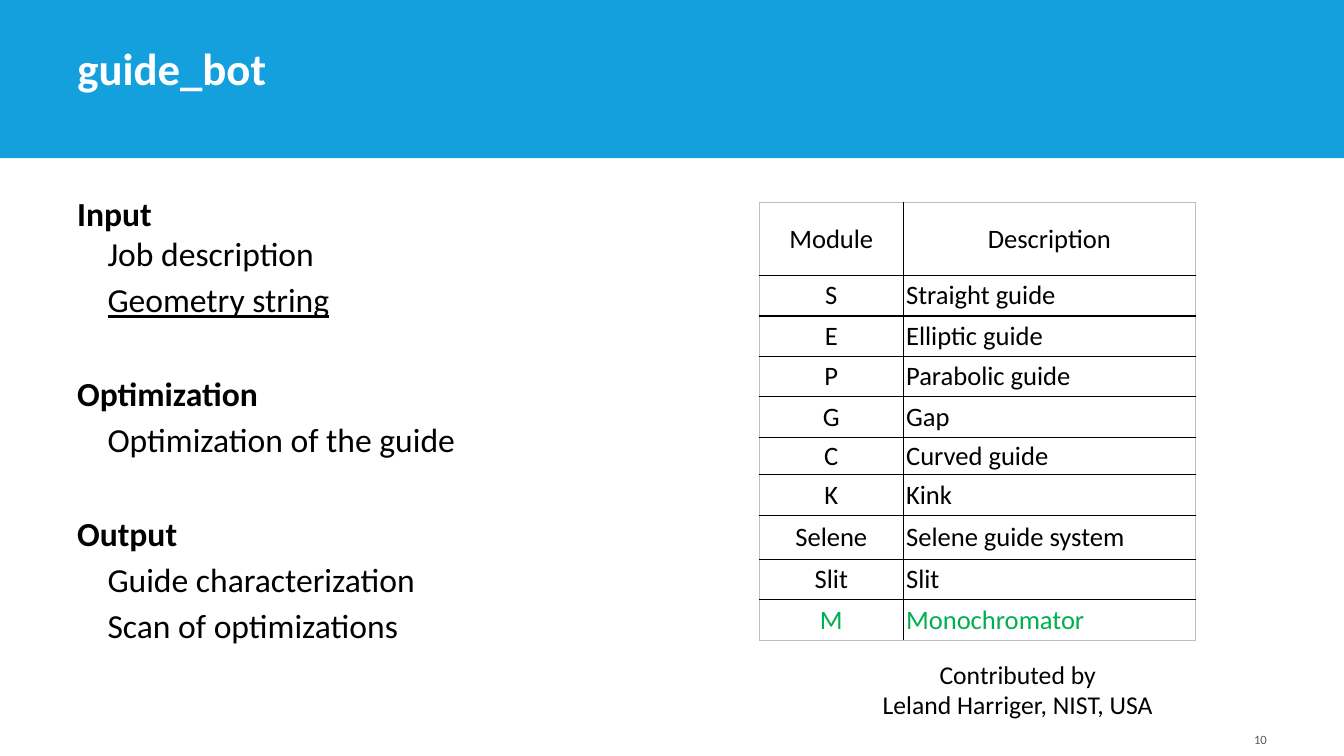
from lxml.etree import SubElement
from pptx import Presentation
from pptx.dml.color import RGBColor
from pptx.enum.shapes import MSO_SHAPE
from pptx.enum.text import MSO_ANCHOR, MSO_AUTO_SIZE, PP_ALIGN
from pptx.oxml.ns import qn
from pptx.util import Pt

COLORS = {"bar": "13A0DD", "white": "FFFFFF", "text": "000000",
          "number": "595959", "new": "00B050", "edge": "BFBFBF"}


def style(para, size, color, align=PP_ALIGN.LEFT, bold=False):
    para.alignment = align
    para.font.name = "Calibri"
    para.font.size = Pt(size)
    para.font.bold = bold
    para.font.color.rgb = RGBColor.from_string(COLORS[color])


def add_border(cell, side, color):
    """Draw one side ("L", "R", "T" or "B") of a table cell."""
    line = SubElement(cell._tc.get_or_add_tcPr(), qn(f"a:ln{side}"), w=str(Pt(1)))
    fill = SubElement(line, qn("a:solidFill"))
    SubElement(fill, qn("a:srgbClr"), val=COLORS[color])


deck = Presentation()
deck.slide_width, deck.slide_height = Pt(960), Pt(540)
page = deck.slides.add_slide(deck.slide_layouts[5])

# Header bar, placed behind the title
bar = page.shapes.add_shape(MSO_SHAPE.RECTANGLE, 0, 0, Pt(960), Pt(113))
bar.shadow.inherit = False
bar.fill.solid()
bar.fill.fore_color.rgb = RGBColor.from_string(COLORS["bar"])
bar.line.fill.background()
page.shapes._spTree.insert(2, bar._element)

title = page.shapes.title
title.left, title.top, title.width, title.height = Pt(48), Pt(27.4), Pt(750), Pt(44)
title.text_frame.text = "guide_bot"
title.text_frame.auto_size = MSO_AUTO_SIZE.NONE
title.text_frame.vertical_anchor = MSO_ANCHOR.BOTTOM
style(title.text_frame.paragraphs[0], 32, "white", bold=True)

# Outline: heading with indented items
outline = [
    ("Input", ["Job description", "Geometry string"]),
    ("Optimization", ["Optimization of the guide"]),
    ("Output", ["Guide characterization", "Scan of optimizations"]),
]
box = page.shapes.add_textbox(Pt(48), Pt(134), Pt(337), Pt(358))
frame = box.text_frame
frame.word_wrap = True
for section, (heading, items) in enumerate(outline):
    para = frame.add_paragraph() if section else frame.paragraphs[0]
    para.text = heading
    para.space_before = Pt(38 if section else 0)
    style(para, 24, "text", bold=True)
    for item in items:
        para = frame.add_paragraph()
        para.text = item
        para._p.get_or_add_pPr().set("marL", str(Pt(21.7)))
        para.space_before = Pt(0 if item == "Job description" else 4.3)
        style(para, 24, "text")
        para.font.underline = item == "Geometry string"

# Table of guide modules: module, description, row height
modules = [
    ("Module", "Description", 52),
    ("S", "Straight guide", 28.9),
    ("E", "Elliptic guide", 28.9),
    ("P", "Parabolic guide", 28.9),
    ("G", "Gap", 28.9),
    ("C", "Curved guide", 26.5),
    ("K", "Kink", 28.9),
    ("Selene", "Selene guide system", 31.5),
    ("Slit", "Slit", 28.9),
    ("M", "Monochromator", 28.9),
]
last = len(modules) - 1
table = page.shapes.add_table(len(modules), 2, Pt(542.3), Pt(144.8),
                              Pt(312), Pt(312)).table
table.first_row = table.horz_banding = False
table.columns[0].width, table.columns[1].width = Pt(103), Pt(208.5)
for row, (module, description, height) in enumerate(modules):
    table.rows[row].height = Pt(height)
    for column, words in enumerate((module, description)):
        cell = table.cell(row, column)
        cell.text = words
        cell.vertical_anchor = MSO_ANCHOR.MIDDLE
        cell.margin_left = cell.margin_right = Pt(2)
        cell.margin_top = cell.margin_bottom = Pt(2)
        centred = row == 0 or column == 0
        style(cell.text_frame.paragraphs[0], 19, "new" if row == last else "text",
              PP_ALIGN.CENTER if centred else PP_ALIGN.LEFT)
        outer = {"L": column == 0, "R": column == 1, "T": row == 0, "B": row == last}
        for side, is_outer in outer.items():
            add_border(cell, side, "edge" if is_outer else "text")
        cell.fill.background()

credit = page.shapes.add_textbox(Pt(610.5), Pt(467.3), Pt(233), Pt(50))
frame = credit.text_frame
frame.word_wrap = False
frame.vertical_anchor = MSO_ANCHOR.MIDDLE
frame.margin_left = frame.margin_right = Pt(3)
frame.margin_top = frame.margin_bottom = Pt(3)
frame.text = "Contributed by\nLeland Harriger, NIST, USA"
for para in frame.paragraphs:
    style(para, 18.3, "text", PP_ALIGN.CENTER)

number = page.shapes.add_textbox(Pt(688), Pt(508.3), Pt(224), Pt(28.8))
number.text_frame.word_wrap = True
number.text_frame.vertical_anchor = MSO_ANCHOR.BOTTOM
number.text_frame.text = "10"
style(number.text_frame.paragraphs[0], 9, "number", PP_ALIGN.RIGHT)

deck.save("out.pptx")
